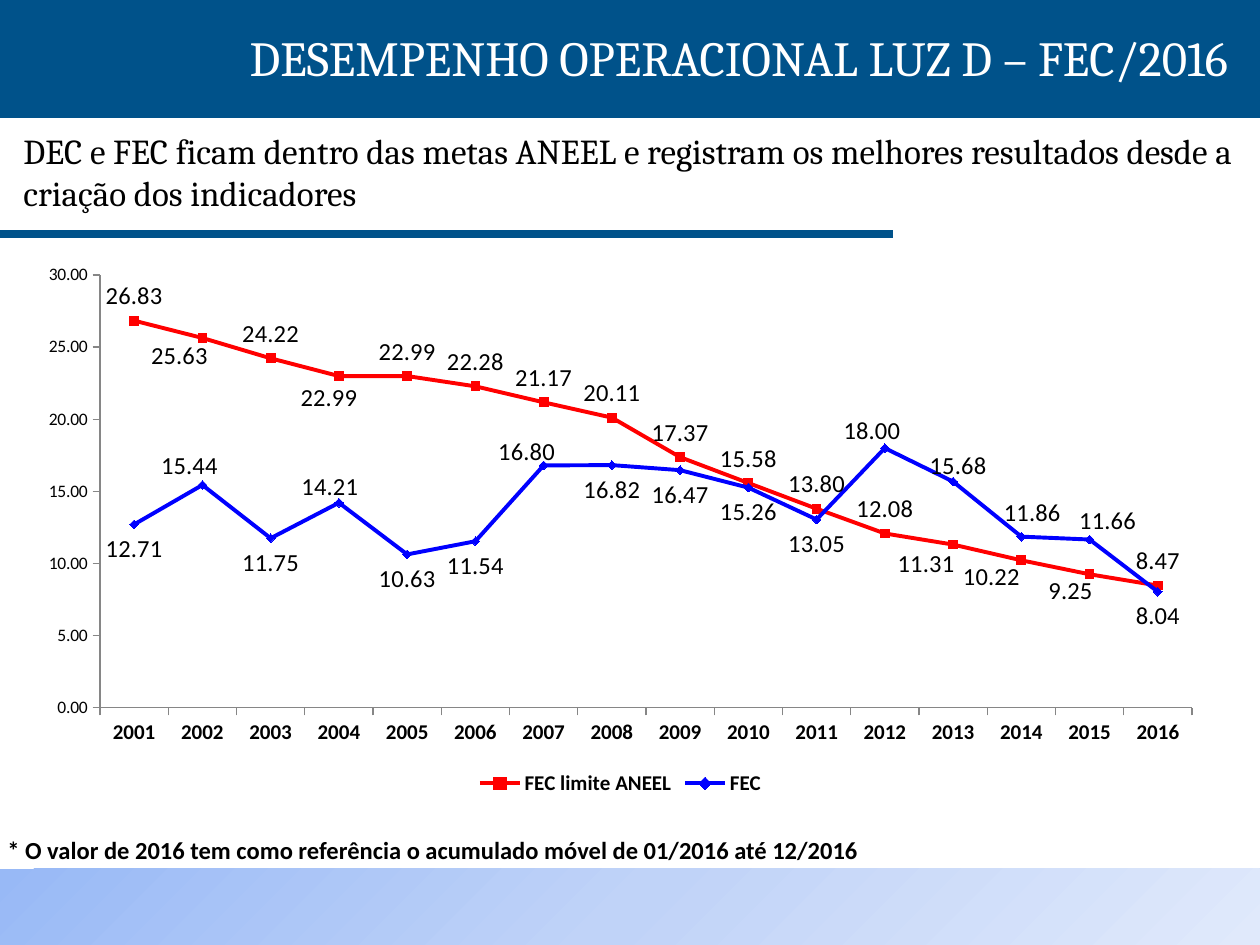
from copy import deepcopy

from lxml.etree import SubElement
from pptx import Presentation
from pptx.chart.data import CategoryChartData
from pptx.dml.color import RGBColor
from pptx.enum.chart import XL_CHART_TYPE as CT, XL_LABEL_POSITION as LP
from pptx.enum.chart import XL_LEGEND_POSITION as LEG, XL_MARKER_STYLE as MS, XL_TICK_MARK as TM
from pptx.enum.shapes import MSO_CONNECTOR as MC, MSO_SHAPE as SH
from pptx.enum.text import MSO_ANCHOR as MA, PP_ALIGN as AL
from pptx.oxml.ns import qn
from pptx.util import Emu, Pt

SCALE = 914400 / 126
COLORS = {"navy": "00528A", "white": "FFFFFF", "black": "000000", "red": "FF0000",
          "blue": "0000FF", "grey": "868686", "sky": "98B9F6", "mist": "C0D3F8", "haze": "E0E9FB"}
CHART_BOX = (25, 255, 1191, 546)
PLOT_BOX = (75, 20, 1092, 433)
LIMIT = [26.83, 25.63, 24.22, 22.99, 22.99, 22.28, 21.17, 20.11,
         17.37, 15.58, 13.8, 12.08, 11.31, 10.22, 9.25, 8.47]
FEC = [12.71, 15.44, 11.75, 14.21, 10.63, 11.54, 16.8, 16.82,
       16.47, 15.26, 13.05, 18, 15.68, 11.86, 11.66, 8.04]
LIMIT_MOVES = {1: (-23, -7), 3: (-10, -3), 12: (-27, -5), 13: (-30, -8), 14: (-19, -8)}
FEC_MOVES = {1: (-13, 5), 3: (-9, 9), 6: (-17, 11), 11: (-13, 7),
             12: (5, 9), 13: (11, 1), 14: (18, 6)}
SERIES = [("FEC limite ANEEL", LIMIT, "red", MS.SQUARE, LP.ABOVE, LP.BELOW, LIMIT_MOVES),
          ("FEC", FEC, "blue", MS.DIAMOND, LP.BELOW, LP.ABOVE, FEC_MOVES)]


def px(*values):
    return [Emu(round(v * SCALE)) for v in values]


def rgb(name):
    return RGBColor.from_string(COLORS[name])


def manual_layout(**values):
    layout = SubElement(SubElement(SERIES_ROOT(), qn("c:layout")), qn("c:manualLayout"))
    for tag, value in values.items():
        SubElement(layout, qn("c:" + tag)).set("val", str(value))
    return layout.getparent()


def SERIES_ROOT():
    from pptx.oxml import parse_xml
    return parse_xml('<c:r xmlns:c="http://schemas.openxmlformats.org/drawingml/2006/chart"/>')


class Deck:
    """Style and current slide, with one method per kind of element."""

    def __init__(self, prs):
        self.s = prs.slides.add_slide(prs.slide_layouts[6])

    def font(self, font, size, name="Calibri", color="black", bold=False):
        font.size, font.name, font.bold = Pt(size), name, bold
        font.color.rgb = rgb(color)

    def band(self, box, *colors):
        sp = self.s.shapes.add_shape(SH.RECTANGLE, *px(*box))
        sp.shadow.inherit = False
        sp.line.fill.background()
        if len(colors) == 1:
            sp.fill.solid()
            sp.fill.fore_color.rgb = rgb(colors[0])
            return
        sp.fill.gradient()
        sp.fill.gradient_angle = 315
        stops = sp._element.spPr.find(qn("a:gradFill")).find(qn("a:gsLst"))
        stops.insert(1, deepcopy(stops[0]))
        for i, (stop, color) in enumerate(zip(sp.fill.gradient_stops, colors)):
            stop.color.rgb = rgb(color)
            stop.position = i / (len(colors) - 1)

    def text(self, box, words, size, name, color="black", bold=False,
             align=AL.LEFT, anchor=MA.TOP, wrap=True):
        tf = self.s.shapes.add_textbox(*px(*box)).text_frame
        tf.word_wrap, tf.vertical_anchor = wrap, anchor
        p = tf.paragraphs[0]
        p.alignment = align
        r = p.add_run()
        r.text = words
        self.font(r.font, size, name, color, bold)

    def rule(self, x1, y1, x2, y2, color, width):
        line = self.s.shapes.add_connector(MC.STRAIGHT, *px(x1, y1, x2, y2))
        line.line.color.rgb, line.line.width = rgb(color), Pt(width)
        SubElement(line._element.spPr, qn("a:effectLst"))

    def axis(self, axis, size, bold):
        axis.has_major_gridlines = False
        axis.major_tick_mark, axis.minor_tick_mark = TM.OUTSIDE, TM.NONE
        axis.format.line.color.rgb = rgb("grey")
        self.font(axis.tick_labels.font, size, bold=bold)

    def series(self, ser, color, marker, usual, moved, moves):
        ser.smooth = False
        ser.format.line.color.rgb, ser.format.line.width = rgb(color), Pt(2.25)
        ser.marker.style, ser.marker.size = marker, 5
        ser.marker.format.fill.solid()
        ser.marker.format.fill.fore_color.rgb = rgb(color)
        ser.marker.format.line.color.rgb = rgb(color)
        labels = ser.data_labels
        labels.show_value, labels.position = True, usual
        self.font(labels.font, 14)
        for i, (dx, dy) in moves.items():
            label = ser.points[i].data_label
            self.font(label.font, 14)
            label.position = moved
            idx = next(e for e in labels._element.iter(qn("c:idx")) if e.get("val") == str(i))
            idx.addnext(manual_layout(x=round(dx / CHART_BOX[2], 4), y=round(dy / CHART_BOX[3], 4)))

    def line_chart(self, box, plot_box, cats, rows):
        data = CategoryChartData(number_format="0.00")
        data.categories = cats
        for name, values, *_ in rows:
            data.add_series(name, values)
        chart = self.s.shapes.add_chart(CT.LINE_MARKERS, *px(*box), data).chart
        self.font(chart.font, 10)
        chart.has_title = False
        chart.has_legend = True
        chart.legend.position, chart.legend.include_in_layout = LEG.BOTTOM, False
        self.font(chart.legend.font, 12, bold=True)
        self.axis(chart.category_axis, 12, True)
        self.axis(chart.value_axis, 10, False)
        val = chart.value_axis
        val.minimum_scale, val.maximum_scale, val.major_unit = 0, 30, 5
        val.tick_labels.number_format, val.tick_labels.number_format_is_linked = "0.00", False
        plot = chart.plots[0]
        plot.vary_by_categories = False
        for ser, (_, _, *style) in zip(plot.series, rows):
            self.series(ser, *style)
        area = chart._chartSpace.find(".//" + qn("c:plotArea"))
        for old in area.findall(qn("c:layout")):
            area.remove(old)
        x, y, w, h = (round(v / box[2 + i % 2], 4) for i, v in enumerate(plot_box))
        area.insert(0, manual_layout(layoutTarget="inner", xMode="edge", yMode="edge",
                                     x=x, y=y, w=w, h=h))


def main():
    prs = Presentation()
    prs.slide_width, prs.slide_height = px(1260, 945)
    deck = Deck(prs)
    deck.band((0, 869, 1260, 76), "sky", "mist", "haze")
    deck.band((0, 0, 1260, 118), "navy")
    deck.text((5, 21, 1235, 72), "DESEMPENHO OPERACIONAL LUZ D – FEC/2016", 28, "Cambria",
              "white", align=AL.RIGHT)
    deck.rule(0, 234, 893, 234, "navy", 4.5)
    deck.text((11, 116, 1249, 111), "DEC e FEC ficam dentro das metas ANEEL e registram os melhores "
              "resultados desde a criação dos indicadores", 20, "Cambria", anchor=MA.MIDDLE)
    deck.text((-5, 829, 882, 43), "* O valor de 2016 tem como referência o acumulado móvel de "
              "01/2016 até 12/2016", 14, "Calibri", bold=True, wrap=False)
    deck.line_chart(CHART_BOX, PLOT_BOX, [str(y) for y in range(2001, 2017)], SERIES)
    prs.save("out.pptx")


if __name__ == "__main__":
    main()
